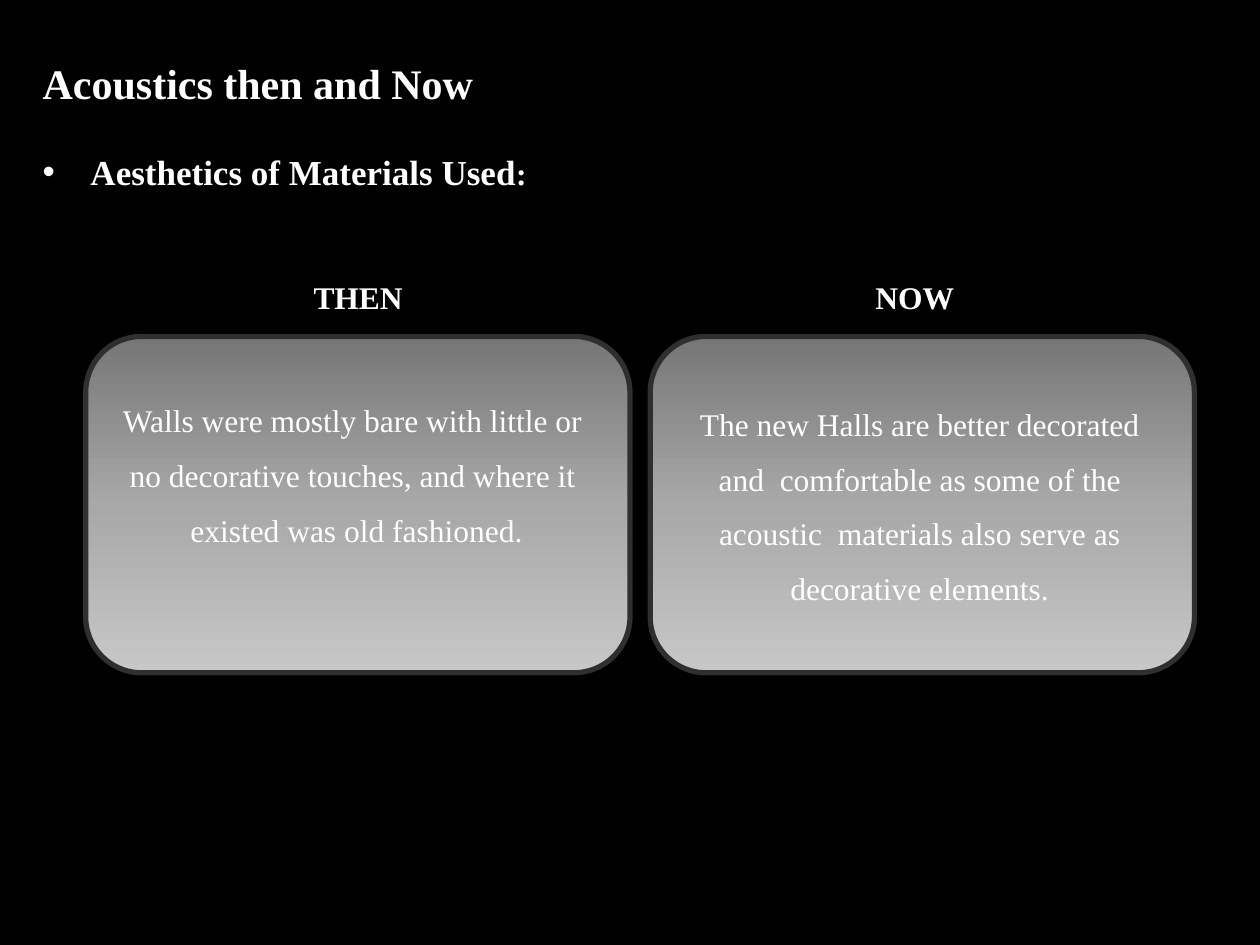
import pptx
import pptx.util
import pptx.dml.color
import pptx.enum.shapes
import pptx.enum.text
import lxml.etree
import pptx.oxml.ns

Inches, Pt = pptx.util.Inches, pptx.util.Pt
ALIGN = pptx.enum.text.PP_ALIGN


def rgb(value):
    return pptx.dml.color.RGBColor.from_string(value)


def add_text(p, text, size, bold=False):
    r = p.add_run()
    r.text = text
    fmt = {"name": "Times New Roman", "size": Pt(size), "bold": bold}
    for key, value in fmt.items():
        setattr(r.font, key, value)
    r.font.color.rgb = rgb("FFFFFF")


prs = pptx.Presentation()
prs.slide_width, prs.slide_height = Inches(10), Inches(7.5)
s = prs.slides.add_slide(prs.slide_layouts[6])
s.background.fill.solid()
s.background.fill.fore_color.rgb = rgb("000000")

# Rounded gradient panels
for left in (0.68, 5.16):
    sp = s.shapes.add_shape(pptx.enum.shapes.MSO_SHAPE.ROUNDED_RECTANGLE,
                            Inches(left), Inches(2.67), Inches(4.32), Inches(2.67))
    sp.shadow.inherit = False
    sp.line.color.rgb = rgb("2F2F2F")
    sp.line.width = Pt(3)
    sp.fill.gradient()
    sp.fill.gradient_angle = 270
    stops = sp.fill._fill._gradFill.find(pptx.oxml.ns.qn("a:gsLst"))
    for stop in list(stops):
        stops.remove(stop)
    for pos, color in ((0, "767676"), (50, "A8A8A8"), (100, "C7C7C7")):
        stop = lxml.etree.SubElement(stops, pptx.oxml.ns.qn("a:gs"), pos=str(pos * 1000))
        lxml.etree.SubElement(stop, pptx.oxml.ns.qn("a:srgbClr"), val=color)

# Text boxes: position, top inset, alignment, indents, line spacing, text, bold
boxes = [
    ((0.24, 0.41, 9.54, 1.18), 0.05, ALIGN.JUSTIFY, (0, 0), 1,
     "Acoustics then and Now", 24, True),
    ((0.63, 2.48, 4.46, 1.9), 0.57, ALIGN.CENTER, (0.15, 0.21), 1.45,
     "Walls were mostly bare with little or  no decorative touches, "
     "and where it  existed was old fashioned.", 18, False),
    ((2.39, 2.16, 5, 0.4), 0.05, ALIGN.LEFT, (0, 0), 1, "THEN", 18, True),
    ((5.16, 3.03, 4.28, 1.75), 0.05, ALIGN.CENTER, (0.12, 0.12), 1.45,
     "The new Halls are better decorated and  comfortable as some of the "
     "acoustic  materials also serve as decorative elements.", 18, False),
    ((6.85, 2.16, 5, 0.4), 0.05, ALIGN.LEFT, (0, 0), 1, "NOW", 18, True),
]
frames = []
for at, top, align, (left, right), spacing, text, size, bold in boxes:
    tf = s.shapes.add_textbox(*map(Inches, at)).text_frame
    fmt = {"word_wrap": True, "margin_top": Inches(top),
           "auto_size": pptx.enum.text.MSO_AUTO_SIZE.SHAPE_TO_FIT_TEXT}
    for key, value in fmt.items():
        setattr(tf, key, value)
    p = tf.paragraphs[0]
    p.alignment, p.line_spacing = align, spacing
    pPr = p._p.get_or_add_pPr()
    pPr.set("marL", str(Inches(left)))
    pPr.set("marR", str(Inches(right)))
    add_text(p, text, size, bold)
    frames.append(tf)

# Bulleted subtitle under the title
p = frames[0].add_paragraph()
p.alignment, p.space_before = ALIGN.JUSTIFY, Pt(24)
pPr = p._p.get_or_add_pPr()
pPr.set("marL", str(Inches(0.38)))
pPr.set("indent", str(Inches(-0.38)))
lxml.etree.SubElement(pPr, pptx.oxml.ns.qn("a:buFont"), typeface="Arial")
lxml.etree.SubElement(pPr, pptx.oxml.ns.qn("a:buChar"), char="•")
add_text(p, "Aesthetics of Materials Used", 20, True)
add_text(p, ":", 18, True)

prs.save("out.pptx")
